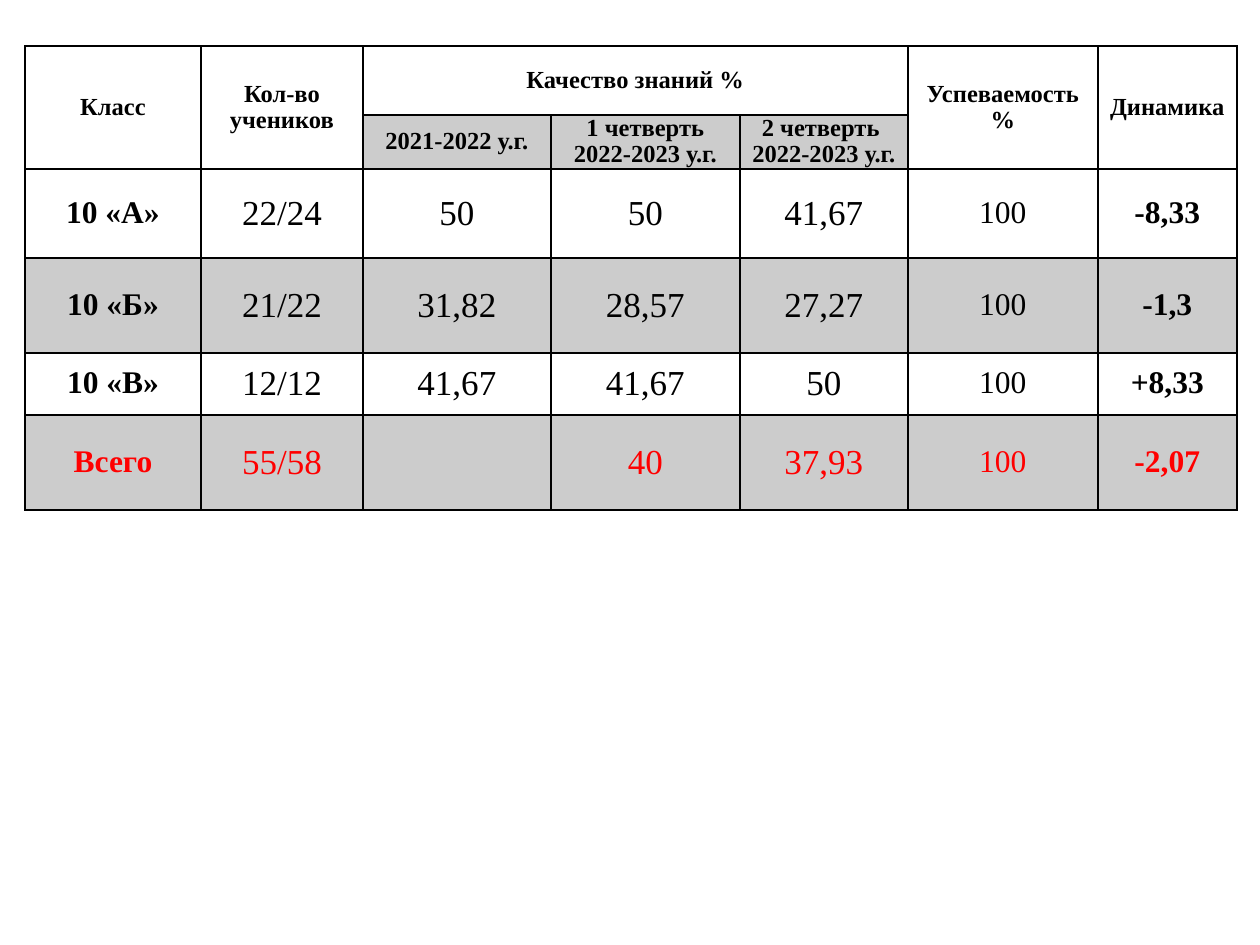
from lxml import etree
from pptx import Presentation
from pptx import util as u
from pptx.dml.color import RGBColor
from pptx.enum import text
from pptx.oxml.ns import qn

PX = 914400 // 126
FONT = "Times New Roman"
COLORS = {"ink": "000000", "total": "FF0000"}

ROWS = [
    ["Класс", "Кол-во учеников", "Качество знаний %", "", "", "Успеваемость %", "Динамика"],
    ["", "", "2021-2022 у.г.", "1 четверть\v2022-2023 у.г.", "2 четверть \v2022-2023 у.г.", "", ""],
    ["10 «А»", "22/24", "50", "50", "41,67", "100", "-8,33"],
    ["10 «Б»", "21/22", "31,82", "28,57", "27,27", "100", "-1,3"],
    ["10 «В»", "12/12", "41,67", "41,67", "50", "100", "+8,33"],
    ["Всего", "55/58", "", "40", "37,93", "100", "-2,07"],
]
LEFT, TOP = 25, 46
WIDTHS = [176, 162, 188, 189, 168, 190, 139]
HEIGHTS = [69, 54, 89, 95, 62, 95]
HEADER_ROWS = 2
TOTAL_ROW = len(ROWS) - 1
MERGES = [((0, 0), (1, 0)), ((0, 1), (1, 1)), ((0, 2), (0, 4)), ((0, 5), (1, 5)), ((0, 6), (1, 6))]
QUALITY_COLUMNS = range(2, 5)
COUNT_COLUMNS = range(1, 5)
BOLD_COLUMNS = (0, 6)


def is_shaded(row, column):
    return row in (3, TOTAL_ROW) or (row == 1 and column in QUALITY_COLUMNS)


def set_fill(cell, shaded):
    """Fill with ink at 20 % opacity, or leave the cell clear."""
    if not shaded:
        cell.fill.background()
        return
    cell.fill.solid()
    cell.fill.fore_color.rgb = RGBColor.from_string(COLORS["ink"])
    color = cell._tc.tcPr.find(qn("a:solidFill"))[0]
    etree.SubElement(color, qn("a:alpha"), val="20000")


def set_borders(cell):
    properties = cell._tc.get_or_add_tcPr()
    for position, side in enumerate(("lnL", "lnR", "lnT", "lnB")):
        line = etree.Element(qn(f"a:{side}"), w=str(u.Pt(1)))
        fill = etree.SubElement(line, qn("a:solidFill"))
        etree.SubElement(fill, qn("a:srgbClr"), val=COLORS["ink"])
        properties.insert(position, line)


def set_text(cell, words, row, column):
    header = row < HEADER_ROWS
    count = not header and column in COUNT_COLUMNS
    cell.vertical_anchor = text.MSO_ANCHOR.MIDDLE
    cell.margin_left = cell.margin_right = u.Inches(0.01 if count else 0.07)
    cell.margin_top = u.Inches(0.01 if count else 0)
    cell.margin_bottom = 0
    cell.text_frame.text = words
    para = cell.text_frame.paragraphs[0]
    para.alignment = text.PP_ALIGN.CENTER
    para.line_spacing = 0.95
    for span in para.runs:
        span.font.name = FONT
        span.font.size = u.Pt(14 if header else 20 if count else 18)
        span.font.bold = header or column in BOLD_COLUMNS
        color = COLORS["total" if row == TOTAL_ROW else "ink"]
        span.font.color.rgb = RGBColor.from_string(color)


def main():
    deck = Presentation()
    deck.slide_width, deck.slide_height = u.Inches(10), u.Inches(7.5)
    page = deck.slides.add_slide(deck.slide_layouts[6])
    frame = page.shapes.add_table(
        len(ROWS), len(WIDTHS), LEFT * PX, TOP * PX, sum(WIDTHS) * PX, sum(HEIGHTS) * PX)
    table = frame.table
    table.first_row = table.horz_banding = False
    for column, width in zip(table.columns, WIDTHS):
        column.width = width * PX
    for row, height in zip(table.rows, HEIGHTS):
        row.height = height * PX
    for start, end in MERGES:
        table.cell(*start).merge(table.cell(*end))
    for row, entries in enumerate(ROWS):
        for column, words in enumerate(entries):
            cell = table.cell(row, column)
            set_text(cell, words, row, column)
            set_fill(cell, is_shaded(row, column))
            set_borders(cell)
    deck.save("out.pptx")


if __name__ == "__main__":
    main()
